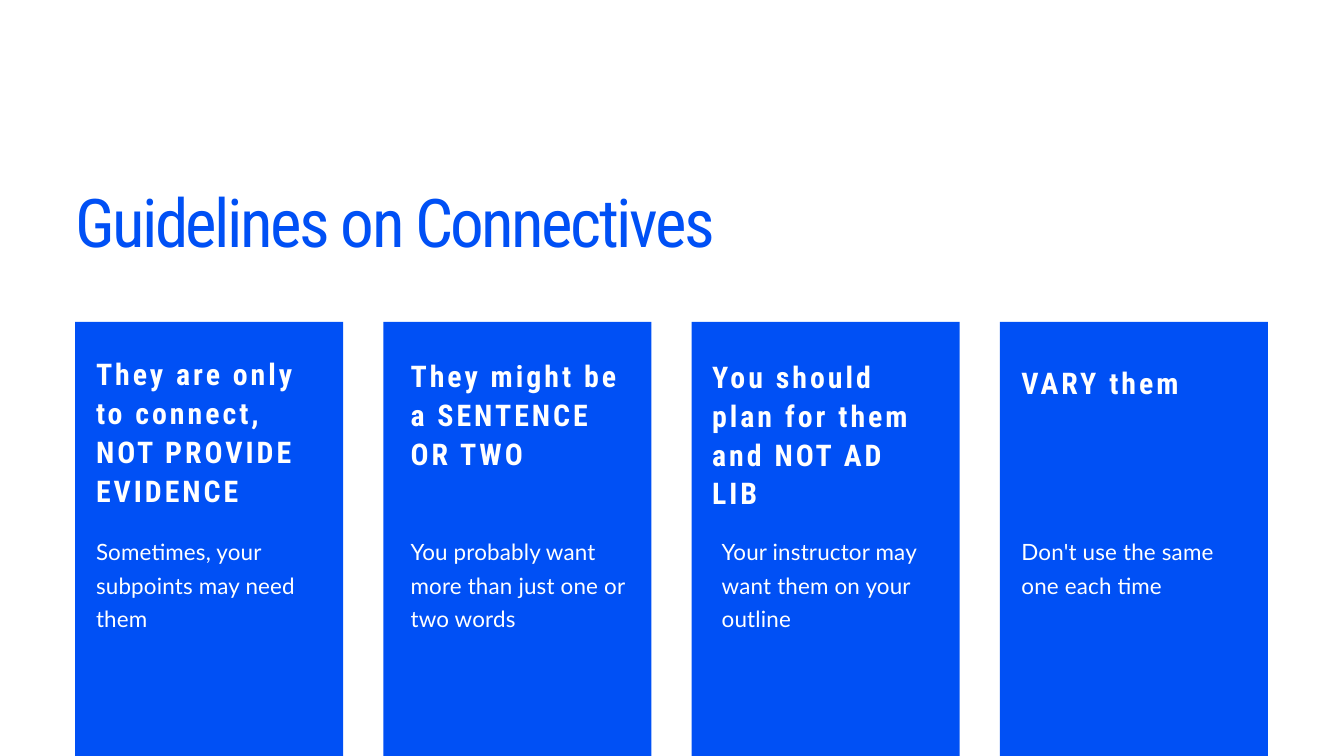
from pptx import Presentation
from pptx.dml.color import RGBColor
from pptx.enum.shapes import MSO_SHAPE
from pptx.util import Cm, Pt

BLUE = "0050F5"
WHITE = "FFFFFF"
HEADING_FONT = "Roboto Condensed"
BODY_FONT = "Lato"

# Card grid, in centimetres
CARD_LEFT, CARD_TOP = 2.84, 12.17
CARD_WIDTH, CARD_HEIGHT = 10.13, 19.84
CARD_PITCH = 11.65
TEXT_WIDTH = 8.56
BODY_TOP = 20.09

# Heading, its left, top and height; body, its left and height
GUIDELINES = [
    ("They are only to connect, NOT PROVIDE EVIDENCE", 3.63, 13.34, 5.87,
     "Sometimes, your subpoints may need them", 3.63, 3.76),
    ("They might be a SENTENCE OR TWO", 15.52, 13.41, 4.37,
     "You probably want more than just one or two words", 15.52, 3.76),
    ("You should plan for them and NOT AD LIB", 26.92, 13.44, 4.37,
     "Your instructor may want them on your outline", 27.28, 3.76),
    ("VARY them", 38.61, 13.67, 1.4,
     "Don't use the same one each time", 38.61, 2.49),
]


def color(value):
    return RGBColor.from_string(value)


def add_text(page, text, left, top, width, height, font, size, line, spacing,
             fill=WHITE, bold=False):
    box = page.shapes.add_textbox(Cm(left), Cm(top), Cm(width), Cm(height))
    frame = box.text_frame
    frame.word_wrap = True
    frame.margin_left = frame.margin_right = 0
    frame.margin_top = frame.margin_bottom = 0
    frame.text = text
    para = frame.paragraphs[0]
    para.line_spacing = Pt(line)
    span = para.runs[0]
    span.font.name = font
    span.font.size = Pt(size)
    span.font.bold = bold
    span.font.color.rgb = color(fill)
    # Letter spacing is stored in hundredths of a point
    span._r.get_or_add_rPr().set("spc", str(round(spacing * 100)))


def add_card(page, left):
    card = page.shapes.add_shape(MSO_SHAPE.RECTANGLE, Cm(left), Cm(CARD_TOP),
                                 Cm(CARD_WIDTH), Cm(CARD_HEIGHT))
    card.shadow.inherit = False
    card.fill.solid()
    card.fill.fore_color.rgb = color(BLUE)
    card.line.fill.background()


def main():
    deck = Presentation()
    deck.slide_width, deck.slide_height = Cm(50.8), Cm(28.58)
    page = deck.slides.add_slide(deck.slide_layouts[6])

    # Title
    add_text(page, "Guidelines on Connectives", CARD_LEFT, 7.34, 31.17, 2.57,
             HEADING_FONT, 72, 72, -2.7, fill=BLUE)

    # Cards with heading and body
    for index, guideline in enumerate(GUIDELINES):
        heading, left, top, height, body, body_left, body_height = guideline
        add_card(page, CARD_LEFT + index * CARD_PITCH)
        add_text(page, heading, left, top, TEXT_WIDTH, height,
                 HEADING_FONT, 32, 41.6, 3.2, bold=True)
        add_text(page, body, body_left, BODY_TOP, TEXT_WIDTH, body_height,
                 BODY_FONT, 24, 36, 0.2)

    deck.save("out.pptx")


if __name__ == "__main__":
    main()
